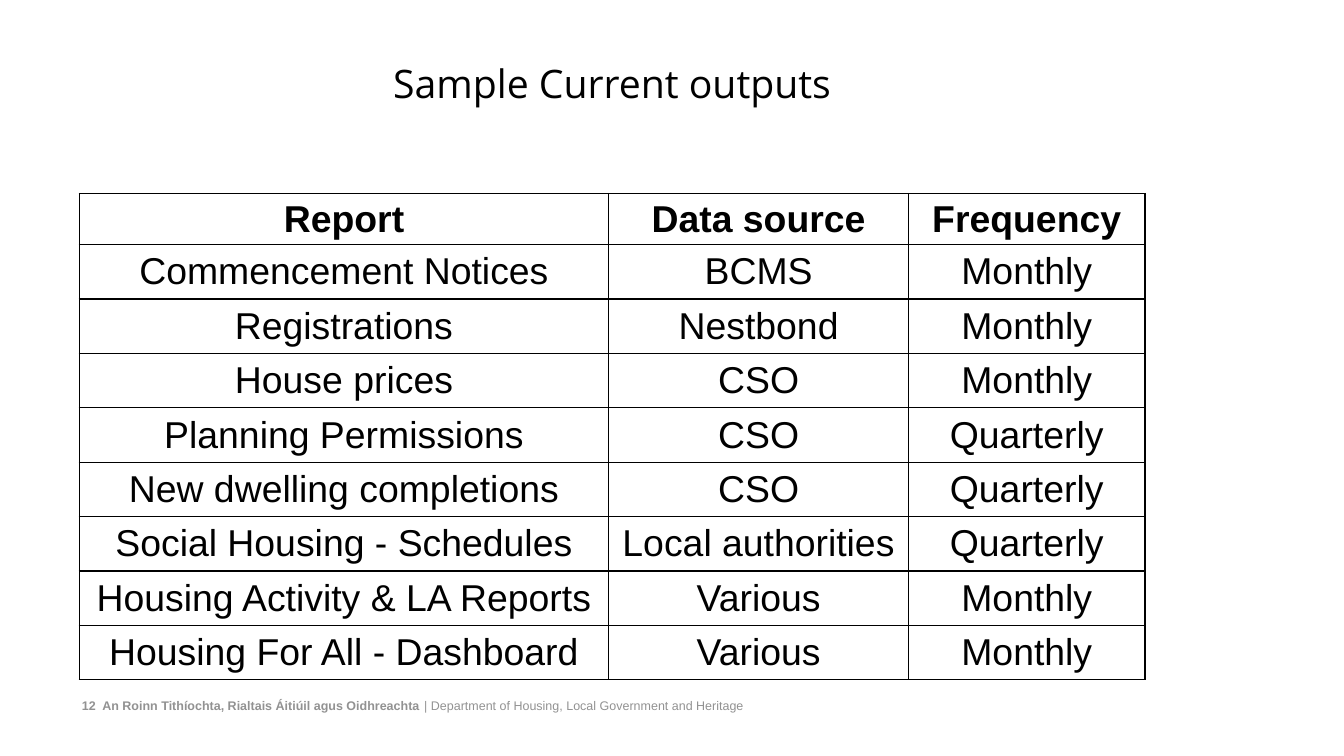
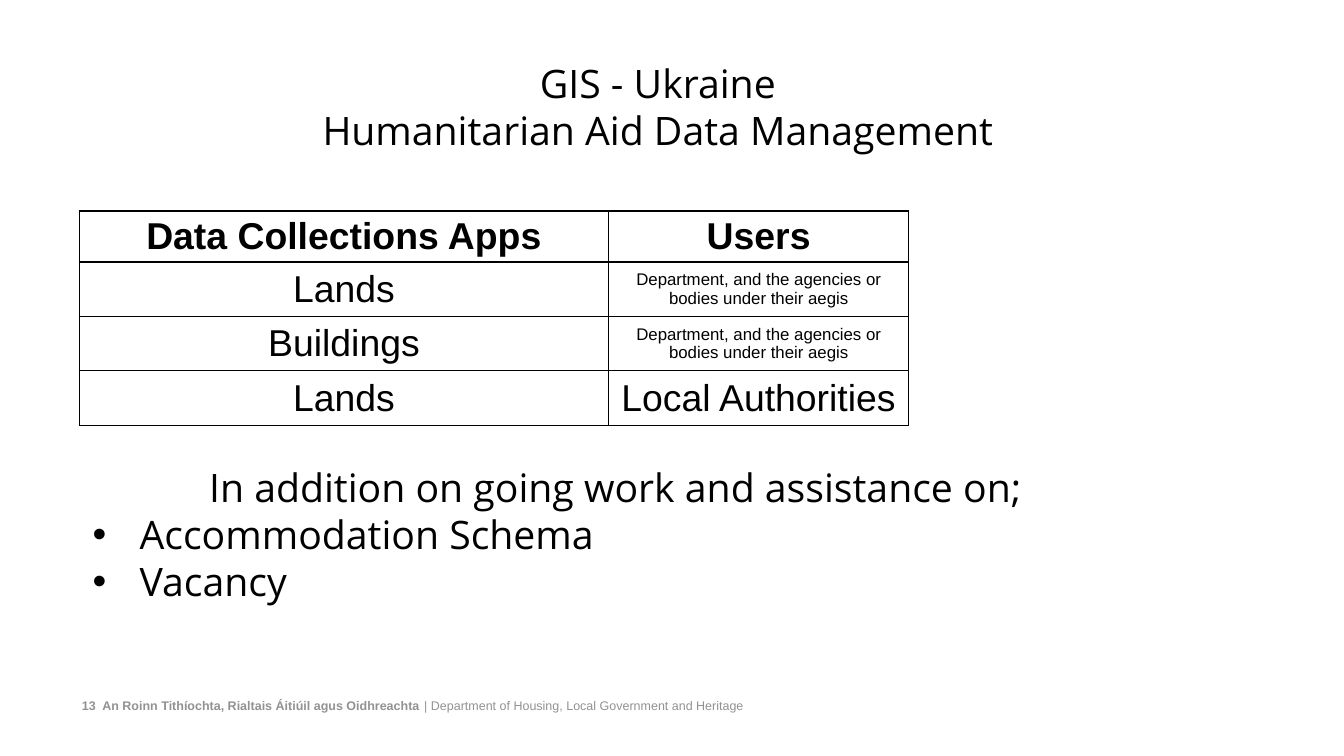
from lxml import etree
from pptx import Presentation
from pptx.dml.color import RGBColor
from pptx.enum.text import MSO_ANCHOR, PP_ALIGN
from pptx.oxml.ns import qn
from pptx.util import Inches, Pt

BLACK = RGBColor(0x00, 0x00, 0x00)
GREY = RGBColor(0x92, 0x92, 0x92)
CENTER = PP_ALIGN.CENTER
LEFT = PP_ALIGN.LEFT
MIDDLE = MSO_ANCHOR.MIDDLE
TOP = MSO_ANCHOR.TOP

HEADING_FONT = "Open Sans"
TABLE_FONT = "Arial"
BLANK_LAYOUT = 6
MARGIN = 0.59
COLUMN_WIDTHS = [3.94, 2.23, 1.76]
HEADER_HEIGHT = 0.38
ROW_HEIGHT = 3.24 / 8
BORDER_WIDTH = Pt(0.75)
AGENCIES = "Department, and the agencies or bodies under their aegis"

OUTPUTS = [
    ("Report", "Data source", "Frequency"),
    ("Commencement Notices", "BCMS", "Monthly"),
    ("Registrations", "Nestbond", "Monthly"),
    ("House prices", "CSO", "Monthly"),
    ("Planning Permissions", "CSO", "Quarterly"),
    ("New dwelling completions", "CSO", "Quarterly"),
    ("Social Housing - Schedules", "Local authorities", "Quarterly"),
    ("Housing Activity & LA Reports", "Various", "Monthly"),
    ("Housing For All - Dashboard", "Various", "Monthly"),
]
APPS = [
    ("Data Collections Apps", "Users"),
    ("Lands", AGENCIES),
    ("Buildings", AGENCIES),
    ("Lands", "Local Authorities"),
]


def style_font(font, name, size, color=BLACK, bold=False):
    """Set the typeface, size, colour and weight of a font."""
    font.name = name
    font.size = Pt(size)
    font.color.rgb = color
    font.bold = bold


def add_text_frame(slide, box, anchor, inset_x, inset_y):
    """Add a wrapping text box and return its text frame."""
    frame = slide.shapes.add_textbox(*map(Inches, box)).text_frame
    frame.word_wrap = True
    frame.vertical_anchor = anchor
    frame.margin_left = frame.margin_right = Inches(inset_x)
    frame.margin_top = frame.margin_bottom = Inches(inset_y)
    return frame


def add_bullet(paragraph, indent):
    """Give a paragraph a hanging round bullet."""
    properties = paragraph._p.get_or_add_pPr()
    properties.set("marL", str(Inches(indent)))
    properties.set("indent", str(-Inches(indent)))
    etree.SubElement(properties, qn("a:buFont"), typeface="Arial")
    etree.SubElement(properties, qn("a:buChar"), char="•")


def add_heading_text(slide, box, heading, bullets=()):
    """Write a centred heading with optional bullets below it."""
    frame = add_text_frame(slide, box, TOP, 0.1, 0.05)
    for index, text in enumerate([heading, *bullets]):
        paragraph = frame.add_paragraph() if index else frame.paragraphs[0]
        paragraph.text = text
        paragraph.alignment = LEFT if index else CENTER
        if index:
            add_bullet(paragraph, 0.35)
        style_font(paragraph.font, HEADING_FONT, 21)


def add_footer(slide, number):
    """Write the slide number and the department name in both languages."""
    frame = add_text_frame(slide, (MARGIN, 5.17, 5.06, 0.16), MIDDLE, 0.02, 0.02)
    paragraph = frame.paragraphs[0]
    parts = [
        (f"{number}  An Roinn Tithíochta, Rialtais Áitiúil agus Oidhreachta ", True),
        ("| Department of Housing, Local Government and Heritage", False),
    ]
    for text, bold in parts:
        run = paragraph.add_run()
        run.text = text
        style_font(run.font, TABLE_FONT, 6.7, GREY, bold)


def add_borders(cell):
    """Draw a thin black line on every side of a table cell."""
    properties = cell._tc.get_or_add_tcPr()
    for index, side in enumerate(("lnL", "lnR", "lnT", "lnB")):
        line = etree.Element(qn(f"a:{side}"), w=str(BORDER_WIDTH))
        fill = etree.SubElement(line, qn("a:solidFill"))
        etree.SubElement(fill, qn("a:srgbClr"), val=str(BLACK))
        properties.insert(index, line)


def fill_cell(cell, text, bold):
    """Write one bordered, centred table cell."""
    cell.fill.background()
    add_borders(cell)
    cell.vertical_anchor = MIDDLE
    cell.margin_left = cell.margin_right = Inches(0.04)
    cell.margin_top = cell.margin_bottom = Inches(0.02)
    paragraph = cell.text_frame.paragraphs[0]
    paragraph.text = text
    paragraph.alignment = CENTER
    style_font(paragraph.font, TABLE_FONT, 9 if text == AGENCIES else 20, bold=bold)


def add_grid(slide, left, top, rows):
    """Add a plain table whose first row is the bold header."""
    widths = COLUMN_WIDTHS[:len(rows[0])]
    heights = [HEADER_HEIGHT] + [ROW_HEIGHT] * (len(rows) - 1)
    box = map(Inches, (left, top, sum(widths), sum(heights)))
    table = slide.shapes.add_table(len(rows), len(widths), *box).table
    table.first_row = table.horz_banding = False
    for column, width in zip(table.columns, widths):
        column.width = Inches(width)
    for row_index, (row, height) in enumerate(zip(rows, heights)):
        table.rows[row_index].height = Inches(height)
        for column_index, text in enumerate(row):
            fill_cell(table.cell(row_index, column_index), text, row_index == 0)


def add_table_slide(presentation, number, title, title_width, table_top, rows):
    """Add a slide with footer, title and table."""
    slide = presentation.slides.add_slide(presentation.slide_layouts[BLANK_LAYOUT])
    add_footer(slide, number)
    add_heading_text(slide, (MARGIN, 0.39, title_width, 0.94), title)
    add_grid(slide, MARGIN, table_top, rows)
    return slide


def main():
    """Build both slides and save the presentation."""
    presentation = Presentation()
    presentation.slide_width = Inches(10)
    presentation.slide_height = Inches(10 * 9 / 16)
    add_table_slide(presentation, 12, "Sample Current outputs", 7.93, 1.44, OUTPUTS)
    ukraine_title = "GIS - Ukraine\vHumanitarian Aid Data Management"
    ukraine = add_table_slide(presentation, 13, ukraine_title, 8.61, 1.57, APPS)
    add_heading_text(
        ukraine,
        (MARGIN, 3.4, 7.98, 1.6),
        "In addition on going work and assistance on;",
        ("Accommodation Schema", "Vacancy"),
    )
    presentation.save("out.pptx")


if __name__ == "__main__":
    main()
